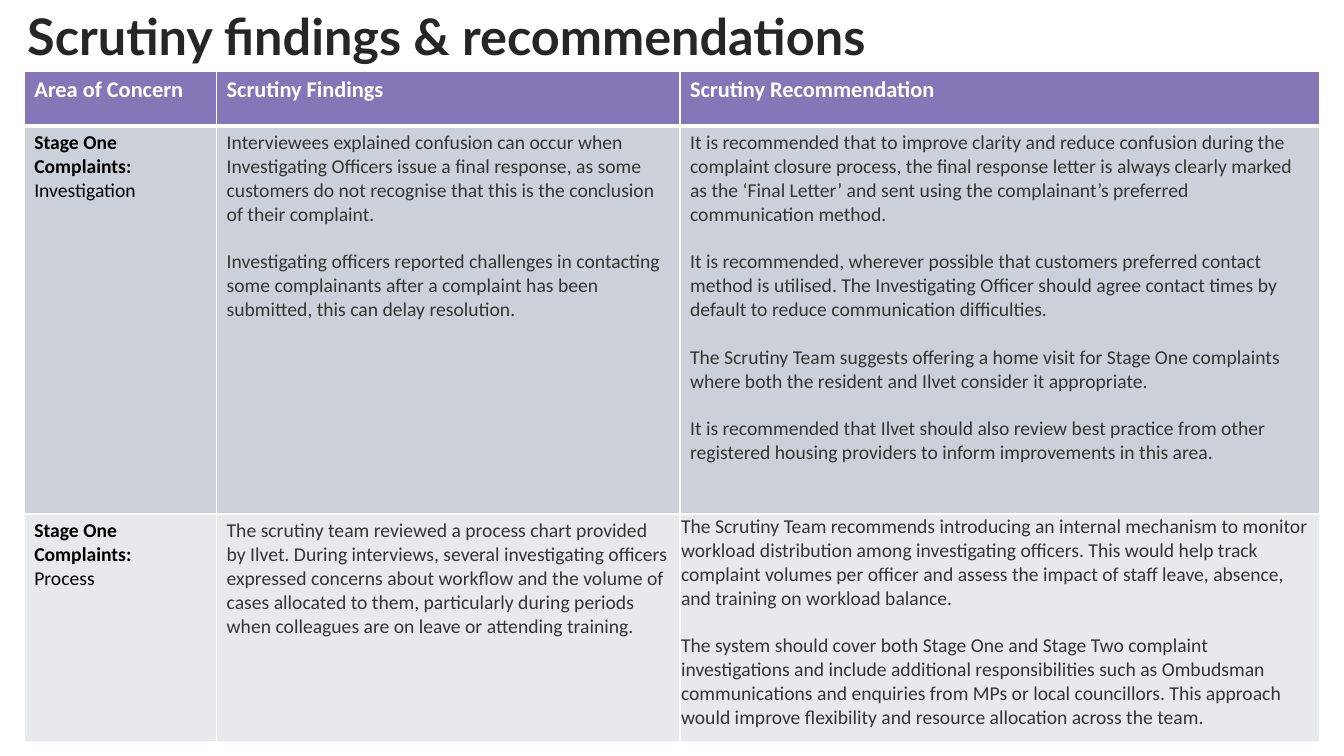
from lxml import etree
from pptx import Presentation
from pptx.dml.color import RGBColor
from pptx.enum.text import MSO_ANCHOR, MSO_AUTO_SIZE, PP_ALIGN
from pptx.oxml.ns import qn
from pptx.util import Inches, Pt

LEFT = PP_ALIGN.LEFT
MIDDLE = MSO_ANCHOR.MIDDLE
NO_AUTOFIT = MSO_AUTO_SIZE.NONE

WHITE = RGBColor(0xFF, 0xFF, 0xFF)
BLACK = RGBColor(0x00, 0x00, 0x00)
TITLE_GREY = RGBColor(0x26, 0x26, 0x26)
TEXT_GREY = RGBColor(0x34, 0x34, 0x34)
PURPLE = RGBColor(0x85, 0x77, 0xB7)
BAND_DARK = RGBColor(0xCC, 0xD0, 0xD9)
BAND_LIGHT = RGBColor(0xE7, 0xE9, 0xED)

COLUMN_WIDTHS = (1.91, 4.6, 6.35)
ROW_HEIGHTS = (0.54, 3.85, 2.26)
HEADINGS = ("Area of Concern", "Scrutiny Findings", "Scrutiny Recommendation")
CONCERNS = (
    (
        "Investigation",
        (
            "Interviewees explained confusion can occur when Investigating Officers issue a final response, as some customers do not recognise that this is the conclusion of their complaint.",
            "Investigating officers reported challenges in contacting some complainants after a complaint has been submitted, this can delay resolution.",
        ),
        (
            "It is recommended that to improve clarity and reduce confusion during the complaint closure process, the final response letter is always clearly marked as the ‘Final Letter’ and sent using the complainant’s preferred communication method.",
            "It is recommended, wherever possible that customers preferred contact method is utilised. The Investigating Officer should agree contact times by default to reduce communication difficulties.",
            "The Scrutiny Team suggests offering a home visit for Stage One complaints where both the resident and Ilvet consider it appropriate.",
            "It is recommended that Ilvet should also review best practice from other registered housing providers to inform improvements in this area.",
        ),
    ),
    (
        "Process",
        (
            "The scrutiny team reviewed a process chart provided by Ilvet. During interviews, several investigating officers expressed concerns about workflow and the volume of cases allocated to them, particularly during periods when colleagues are on leave or attending training.",
        ),
        (
            "The Scrutiny Team recommends introducing an internal mechanism to monitor workload distribution among investigating officers. This would help track complaint volumes per officer and assess the impact of staff leave, absence, and training on workload balance.",
            "The system should cover both Stage One and Stage Two complaint investigations and include additional responsibilities such as Ombudsman communications and enquiries from MPs or local councillors. This approach would improve flexibility and resource allocation across the team.",
        ),
    ),
)


def add_text(tf, text, size=14, color=TEXT_GREY, bold=False, font="Calibri", before=0):
    """Write one paragraph, filling the first one while it is empty."""
    p = tf.paragraphs[0] if not tf.text else tf.add_paragraph()
    p.alignment = LEFT
    p.space_before = Pt(before)
    r = p.add_run()
    r.text = text
    r.font.name = font
    r.font.size = Pt(size)
    r.font.bold = bold
    r.font.color.rgb = color


def style_cell(cell, fill, bottom=1):
    """Give a cell white borders and a solid fill."""
    tcPr = cell._tc.get_or_add_tcPr()
    for side, width in (("L", 1), ("R", 1), ("T", 1), ("B", bottom)):
        ln = etree.SubElement(tcPr, qn(f"a:ln{side}"), w=str(Pt(width)))
        solid = etree.SubElement(ln, qn("a:solidFill"))
        etree.SubElement(solid, qn("a:srgbClr"), val=str(WHITE))
    cell.fill.solid()
    cell.fill.fore_color.rgb = fill


def add_title(s, left, top, width, height):
    """Place the slide title in the given box."""
    sp = s.shapes.title
    sp.left, sp.top = Inches(left), Inches(top)
    sp.width, sp.height = Inches(width), Inches(height)
    tf = sp.text_frame
    tf.word_wrap = True
    tf.auto_size = NO_AUTOFIT
    tf.vertical_anchor = MIDDLE
    add_text(tf, "Scrutiny findings & recommendations", size=36,
             color=TITLE_GREY, bold=True, font="Lato")


def add_findings_table(s, left, top, width, height):
    """Build the table of concerns, findings and recommendations."""
    table = s.shapes.add_table(len(ROW_HEIGHTS), len(COLUMN_WIDTHS), Inches(left),
                               Inches(top), Inches(width), Inches(height)).table
    for column, share in zip(table.columns, COLUMN_WIDTHS):
        column.width = Inches(width * share / sum(COLUMN_WIDTHS))
    for row, share in zip(table.rows, ROW_HEIGHTS):
        row.height = Inches(height * share / sum(ROW_HEIGHTS))
    for cell, heading in zip(table.rows[0].cells, HEADINGS):
        style_cell(cell, PURPLE, bottom=3)
        add_text(cell.text_frame, heading, size=16, color=WHITE, bold=True)
    for i, (stage, *columns) in enumerate(CONCERNS, 1):
        for cell in table.rows[i].cells:
            style_cell(cell, BAND_DARK if i % 2 else BAND_LIGHT)
        area = table.cell(i, 0).text_frame
        add_text(area, "Stage One Complaints:", color=BLACK, bold=True)
        add_text(area, stage, color=BLACK)
        for j, paragraphs in enumerate(columns, 1):
            for n, text in enumerate(paragraphs):
                add_text(table.cell(i, j).text_frame, text, before=17 if n else 0)
    process_advice = table.cell(2, 2)
    process_advice.margin_left = process_advice.margin_right = Inches(0.01)
    process_advice.margin_top, process_advice.margin_bottom = Inches(0.01), 0


def main():
    """Build and save the slide."""
    prs = Presentation()
    prs.slide_width, prs.slide_height = Inches(13.33), Inches(7.5)
    s = prs.slides.add_slide(prs.slide_layouts[5])
    add_findings_table(s, 0.24, 0.71, 12.85, 6.65)
    add_title(s, 0.17, 0, 11.81, 0.71)
    prs.save("out.pptx")


if __name__ == "__main__":
    main()
